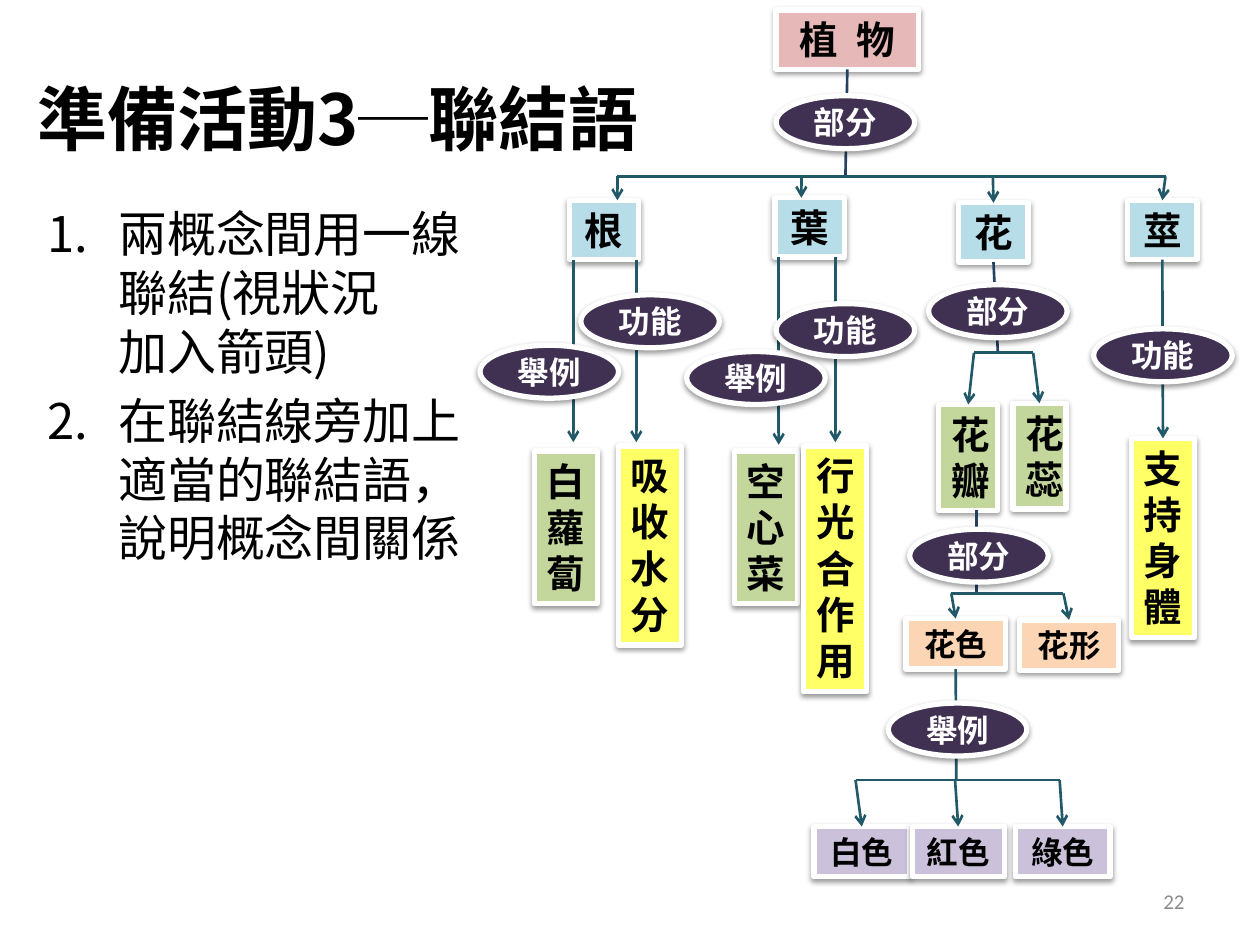
from lxml import etree
from pptx import Presentation
from pptx.dml.color import RGBColor
from pptx.enum.shapes import MSO_CONNECTOR, MSO_SHAPE
from pptx.enum.text import MSO_ANCHOR, MSO_AUTO_SIZE, PP_ALIGN
from pptx.oxml.ns import qn
from pptx.util import Inches, Pt

RECT, OVAL = MSO_SHAPE.RECTANGLE, MSO_SHAPE.OVAL
LINE = MSO_CONNECTOR.STRAIGHT
TOP, MID = MSO_ANCHOR.TOP, MSO_ANCHOR.MIDDLE
LEFT, MIDDLE, RIGHT = PP_ALIGN.LEFT, PP_ALIGN.CENTER, PP_ALIGN.RIGHT
GROW = MSO_AUTO_SIZE.SHAPE_TO_FIT_TEXT
CJK, LATIN = "Noto Sans CJK SC", "Calibri"
TEAL, NAVY, BLACK, WHITE = "215968", "254061", "000000", "FFFFFF"
NEAR = 0.055

TITLE = "準備活動3─聯結語"
STEPS = [
    ["兩概念間用一線聯結(視狀況", "加入箭頭)"],
    ["在聯結線旁加上適當的聯結語，說明概念間關係"],
]

# fill, text size, anchor, alignment, [(text, left, top, width, height)]
GROUPS = [
    ("E6B9B8", 22, TOP, MIDDLE, [("植 物", 6.16, 0.08, 1.13, 0.47)]),
    ("B7DEE8", 22, MID, MIDDLE, [
        ("根", 4.52, 1.59, 0.55, 0.47), ("葉", 6.15, 1.57, 0.55, 0.47),
        ("花", 7.61, 1.61, 0.55, 0.47), ("莖", 8.95, 1.59, 0.55, 0.47)]),
    ("C3D69B", 22, MID, MIDDLE, [
        ("白蘿蔔", 4.24, 3.58, 0.5, 1.21), ("空心菜", 5.83, 3.58, 0.5, 1.21),
        ("花蕊", 8.04, 3.2, 0.42, 0.84), ("花瓣", 7.45, 3.21, 0.47, 0.84)]),
    ("FFFF66", 22, TOP, LEFT, [
        ("吸收水分", 4.91, 3.54, 0.5, 1.58), ("行光合作用", 6.38, 3.54, 0.5, 1.95),
        ("支持身體", 8.98, 3.48, 0.5, 1.58)]),
    ("FCD5B5", 18, TOP, MIDDLE, [
        ("花形", 8.09, 4.92, 0.79, 0.4), ("花色", 7.19, 4.91, 0.79, 0.4)]),
    ("CCC1DA", 18, TOP, MIDDLE, [
        ("白色", 6.46, 6.56, 0.76, 0.4), ("紅色", 7.24, 6.56, 0.73, 0.4),
        ("綠色", 8.06, 6.56, 0.75, 0.4)]),
]
LABELS = [
    ("舉例", 5.45, 2.79), ("舉例", 3.81, 2.74), ("功能", 4.61, 2.34),
    ("功能", 8.68, 2.61), ("部分", 6.16, 0.76), ("部分", 7.37, 2.26),
    ("部分", 7.22, 4.2), ("舉例", 7.05, 5.58), ("功能", 6.16, 2.41),
]
# parent, trunk x, bar y, trunk colour, [(child, x)]
FORKS = [
    ("植 物", 6.71, 1.4, NAVY, [("根", 4.9), ("葉", 6.36), ("花", 7.88), ("莖", 9.25)]),
    ("花", 7.92, 2.8, NAVY, [("花瓣", 7.73), ("花蕊", 8.2)]),
    ("花瓣", 7.75, 4.71, NAVY, [("花色", 7.55), ("花形", 8.44)]),
    ("花色", 7.59, 6.19, TEAL, [("白色", 6.79), ("紅色", 7.58), ("綠色", 8.41)]),
]
# parent, x, end y
DROPS = [("根", 4.55, 3.51), ("根", 5.05, 3.51), ("葉", 6.18, 3.53),
         ("葉", 6.63, 3.51), ("莖", 9.25, 3.48)]

deck = Presentation()
deck.slide_width, deck.slide_height = Inches(10), Inches(7.5)
slide = deck.slides.add_slide(deck.slide_layouts[6])
boxes = {}


def color(code):
    return RGBColor.from_string(code)


def add_run(para, text, size, code, bold=False, face=CJK):
    run = para.add_run()
    run.text = text
    font = run.font
    font.size, font.bold, font.name = Pt(size), bold, face
    font.color.rgb = color(code)
    etree.SubElement(run._r.get_or_add_rPr(), qn("a:ea"), typeface=face)
    return run


def add_text(at, anchor=TOP):
    frame = slide.shapes.add_textbox(*map(Inches, at)).text_frame
    frame.word_wrap, frame.vertical_anchor = True, anchor
    return frame


def add_node(kind, text, at, fill, size, code, anchor=MID, align=MIDDLE):
    node = slide.shapes.add_shape(kind, *map(Inches, at))
    node.fill.solid()
    node.fill.fore_color.rgb = color(fill)
    node.line.color.rgb = color(WHITE)
    node.line.width = Pt(3)
    node.shadow.inherit = False
    glow = etree.SubElement(
        node._element.spPr.find(qn("a:effectLst")), qn("a:outerShdw"),
        blurRad=str(Pt(3.1)), dist=str(Pt(1.6)), dir="5400000", rotWithShape="0")
    tint = etree.SubElement(glow, qn("a:srgbClr"), val=BLACK)
    etree.SubElement(tint, qn("a:alpha"), val="38000")
    frame = node.text_frame
    frame.word_wrap, frame.vertical_anchor = True, anchor
    if kind == RECT:
        frame.auto_size = GROW
    para = frame.paragraphs[0]
    para.alignment = align
    run = add_run(para, text, size, code, True)
    if " " in text:
        run._r.get_or_add_rPr().set("spc", "300")
    return node


def join(link, x, y):
    for node, (left, top, wide, high) in boxes.values():
        if abs(x - left - wide / 2) < NEAR:
            for side, edge in ((0, top), (2, top + high)):
                if abs(y - edge) < 0.01:
                    link(node, side)


def add_line(x1, y1, x2, y2, code=TEAL, arrow=False):
    line = slide.shapes.add_connector(LINE, *map(Inches, (x1, y1, x2, y2)))
    line.line.color.rgb = color(code)
    line.line.width = Pt(1.5)
    if arrow:
        etree.SubElement(line.line._get_or_add_ln(), qn("a:tailEnd"), type="arrow")
    etree.SubElement(line._element.spPr, qn("a:effectLst"))
    join(line.begin_connect, x1, y1)
    join(line.end_connect, x2, y2)


def foot(name):
    at = boxes[name][1]
    return at[1] + at[3]


head = add_text((0.2, 0.3, 9.21, 1.27), MID).paragraphs[0]
add_run(head, TITLE, 40, BLACK, True)

body = add_text((0.28, 1.57, 3.51, 5.13))
for i, parts in enumerate(STEPS):
    para = body.add_paragraph() if i else body.paragraphs[0]
    props = para._p.get_or_add_pPr()
    props.set("marL", str(Inches(0.56)))
    props.set("indent", str(-Inches(0.56)))
    etree.SubElement(props, qn("a:buFont"), typeface=CJK)
    etree.SubElement(props, qn("a:buAutoNum"), type="arabicPeriod")
    if i:
        para.space_before = Pt(5.6)
    for j, part in enumerate(parts):
        if j:
            para.add_line_break()
        add_run(para, part, 28, BLACK)

for fill, size, anchor, align, items in GROUPS:
    for text, *at in items:
        boxes[text] = add_node(RECT, text, at, fill, size, BLACK, anchor, align), at

for name, x, bar, code, kids in FORKS:
    add_line(x, foot(name), x, bar, code)
    add_line(kids[0][1], bar, kids[-1][1], bar)
    for kid, spot in kids:
        add_line(spot, bar, spot, boxes[kid][1][1], arrow=True)
for name, x, end in DROPS:
    add_line(x, foot(name), x, end, arrow=True)

for text, x, y in LABELS:
    add_node(OVAL, text, (x, y, 1.1, 0.42), "403152", 18, WHITE)

page = add_text((7.17, 6.95, 2.33, 0.4), MID).paragraphs[0]
page.alignment = RIGHT
add_run(page, "22", 12, "8C8C8C", face=LATIN)

deck.save("out.pptx")
